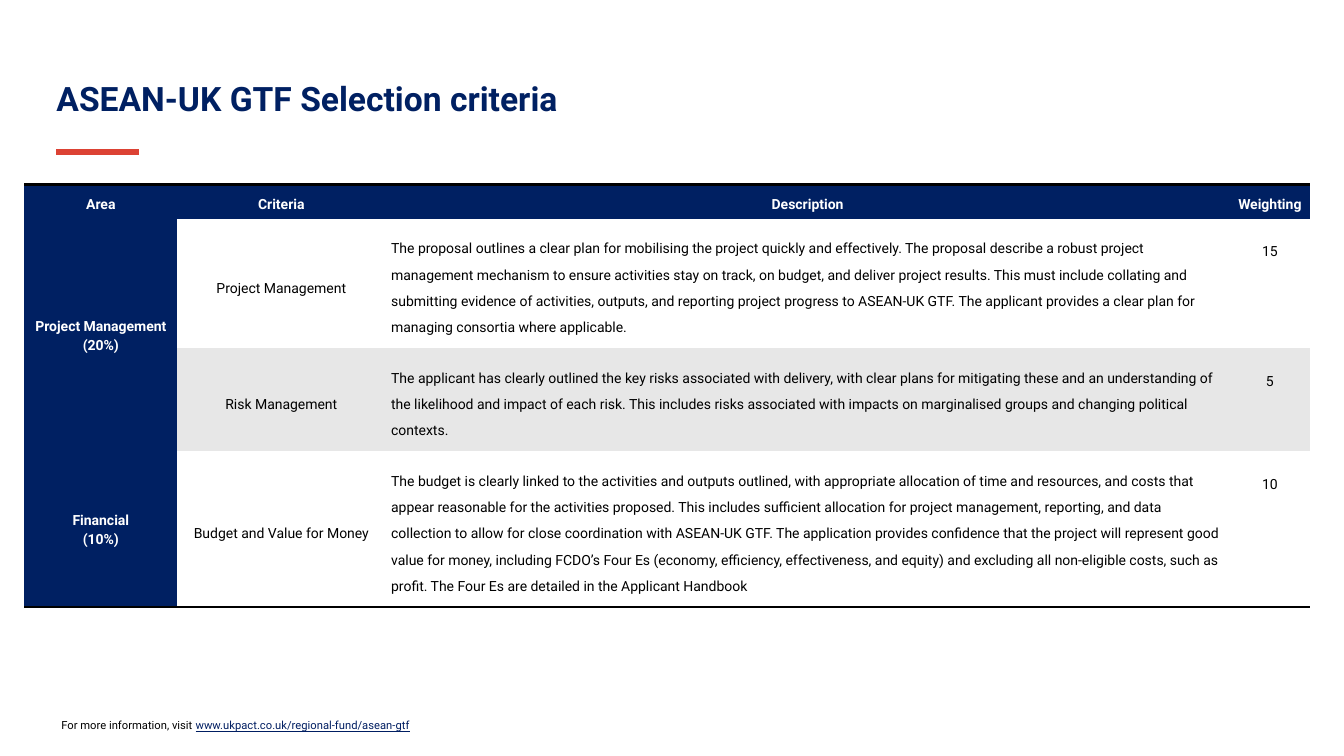
from lxml.etree import SubElement
from pptx import Presentation
from pptx.dml.color import RGBColor
from pptx.enum.shapes import MSO_CONNECTOR as Connector
from pptx.enum.text import MSO_ANCHOR as Anchor, MSO_AUTO_SIZE as AutoSize, PP_ALIGN as Align
from pptx.oxml.ns import qn
from pptx.util import Inches, Pt

NAVY = RGBColor(0x00, 0x20, 0x62)
LINK_NAVY = RGBColor(0x00, 0x1E, 0x62)
RED = RGBColor(0xDC, 0x42, 0x34)
GREY = RGBColor(0xE7, 0xE7, 0xE7)
WHITE = RGBColor(0xFF, 0xFF, 0xFF)
BLACK = RGBColor(0x00, 0x00, 0x00)

COLUMN_WIDTHS = (1.52, 2.06, 8.38, 0.79)
ROW_HEIGHTS = (0.34, 0.95, 0.95, 1.27)
HEADERS = ("Area", "Criteria", "Description", "Weighting")
CRITERIA = (
    ("Project Management\n(20%)", "Project Management",
     "The proposal outlines a clear plan for mobilising the project quickly and effectively. "
     "The proposal describe a robust project management mechanism to ensure activities stay on "
     "track, on budget, and deliver project results. This must include collating and submitting "
     "evidence of activities, outputs, and reporting project progress to ASEAN-UK GTF. The "
     "applicant provides a clear plan for managing consortia where applicable.", "15"),
    ("", "Risk Management",
     "The applicant has clearly outlined the key risks associated with delivery, with clear "
     "plans for mitigating these and an understanding of the likelihood and impact of each risk. "
     "This includes risks associated with impacts on marginalised groups and changing political "
     "contexts.", "5"),
    ("Financial\n(10%)", "Budget and Value for Money",
     "The budget is clearly linked to the activities and outputs outlined, with appropriate "
     "allocation of time and resources, and costs that appear reasonable for the activities "
     "proposed. This includes sufficient allocation for project management, reporting, and data "
     "collection to allow for close coordination with ASEAN-UK GTF. The application provides "
     "confidence that the project will represent good value for money, including FCDO’s Four Es "
     "(economy, efficiency, effectiveness, and equity) and excluding all non-eligible costs, "
     "such as profit. The Four Es are detailed in the Applicant Handbook", "10"),
)


class CriteriaSlide:
    font_name = "Roboto"

    def __init__(self, presentation):
        self.slide = presentation.slides.add_slide(presentation.slide_layouts[5])

    def style_run(self, run, size, color, bold=False):
        run.font.name = self.font_name
        run.font.size = Pt(size)
        run.font.color.rgb = color
        run.font.bold = bold

    def add_title(self, text):
        title = self.slide.shapes.title
        title.left, title.top = Inches(0.56), Inches(0.6)
        title.width, title.height = Inches(12.2), Inches(0.8)
        frame = title.text_frame
        frame.text = text
        frame.auto_size = AutoSize.NONE
        frame.vertical_anchor = Anchor.MIDDLE
        frame.margin_left = frame.margin_right = frame.margin_top = frame.margin_bottom = 0
        paragraph = frame.paragraphs[0]
        paragraph.alignment = Align.LEFT
        paragraph.line_spacing = 0.9
        paragraph.space_before = Pt(10)
        self.style_run(paragraph.runs[0], 24, NAVY, bold=True)

    def add_accent_line(self):
        y = Inches(1.51)
        line = self.slide.shapes.add_connector(
            Connector.STRAIGHT, Inches(0.56), y, Inches(1.38), y)
        line.line.color.rgb = RED
        line.line.width = Pt(4.5)
        SubElement(line._element.spPr, qn("a:effectLst"))

    def add_footer(self, text, address):
        box = self.slide.shapes.add_textbox(
            Inches(0.51), Inches(7.08), Inches(4.66), Inches(0.24))
        box.text_frame.word_wrap = True
        box.text_frame.auto_size = AutoSize.SHAPE_TO_FIT_TEXT
        paragraph = box.text_frame.paragraphs[0]
        paragraph.text = text
        self.style_run(paragraph.runs[0], 8, BLACK)
        link = paragraph.add_run()
        link.text = address
        self.style_run(link, 8, LINK_NAVY)
        link.font.underline = True

    def set_borders(self, cell, black_side):
        """Clear every cell edge except black_side, which gets a 2 pt line."""
        properties = cell._tc.get_or_add_tcPr()
        for position, side in enumerate(("lnL", "lnR", "lnT", "lnB")):
            border = SubElement(properties, qn(f"a:{side}"))
            properties.insert(position, border)
            if side == black_side:
                border.set("w", str(Pt(2)))
                fill = SubElement(border, qn("a:solidFill"))
                SubElement(fill, qn("a:srgbClr")).set("val", str(BLACK))
            else:
                SubElement(border, qn("a:noFill"))

    def fill_cell(self, cell, text, fill, spacing, margins, top=False, left=False):
        dark = fill == NAVY
        cell.fill.solid()
        cell.fill.fore_color.rgb = fill
        cell.margin_left = cell.margin_right = Inches(margins[0])
        cell.margin_top = cell.margin_bottom = Inches(margins[1])
        cell.vertical_anchor = Anchor.TOP if top else Anchor.MIDDLE
        cell.text_frame.text = text
        for paragraph in cell.text_frame.paragraphs:
            paragraph.alignment = Align.LEFT if left else Align.CENTER
            paragraph.line_spacing = Pt(spacing)
            for run in paragraph.runs:
                self.style_run(run, 10, WHITE if dark else BLACK, bold=dark)

    def add_criteria_table(self):
        table = self.slide.shapes.add_table(
            len(ROW_HEIGHTS), len(COLUMN_WIDTHS), Inches(0.24), Inches(1.83),
            Inches(sum(COLUMN_WIDTHS)), Inches(sum(ROW_HEIGHTS))).table
        table.first_row = table.horz_banding = False
        for column, width in zip(table.columns, COLUMN_WIDTHS):
            column.width = Inches(width)
        for row, height in zip(table.rows, ROW_HEIGHTS):
            row.height = Inches(height)

        last_column = len(HEADERS) - 1
        for column, header in enumerate(HEADERS):
            self.fill_cell(table.cell(0, column), header, NAVY, 15.8, (0.03, 0.06),
                           top=column == last_column)
        line_spacings = (13.5, 18.8, 18.8, 21)
        for row, texts in enumerate(CRITERIA, start=1):
            band = WHITE if row % 2 else GREY
            for column, text in enumerate(texts):
                self.fill_cell(table.cell(row, column), text, band if column else NAVY,
                               line_spacings[column], (0.06, 0.12),
                               top=column == last_column, left=column == 2)
        black_sides = {0: "lnT", len(CRITERIA): "lnB"}
        for row in range(len(ROW_HEIGHTS)):
            for column in range(len(HEADERS)):
                self.set_borders(table.cell(row, column), black_sides.get(row))
        table.cell(1, 0).merge(table.cell(2, 0))


def main():
    presentation = Presentation()
    presentation.slide_width, presentation.slide_height = Inches(13.33), Inches(7.5)
    slide = CriteriaSlide(presentation)
    slide.add_accent_line()
    slide.add_footer("For more information, visit ", "www.ukpact.co.uk/regional-fund/asean-gtf")
    slide.add_title("ASEAN-UK GTF Selection criteria")
    slide.add_criteria_table()
    presentation.save("out.pptx")


if __name__ == "__main__":
    main()
